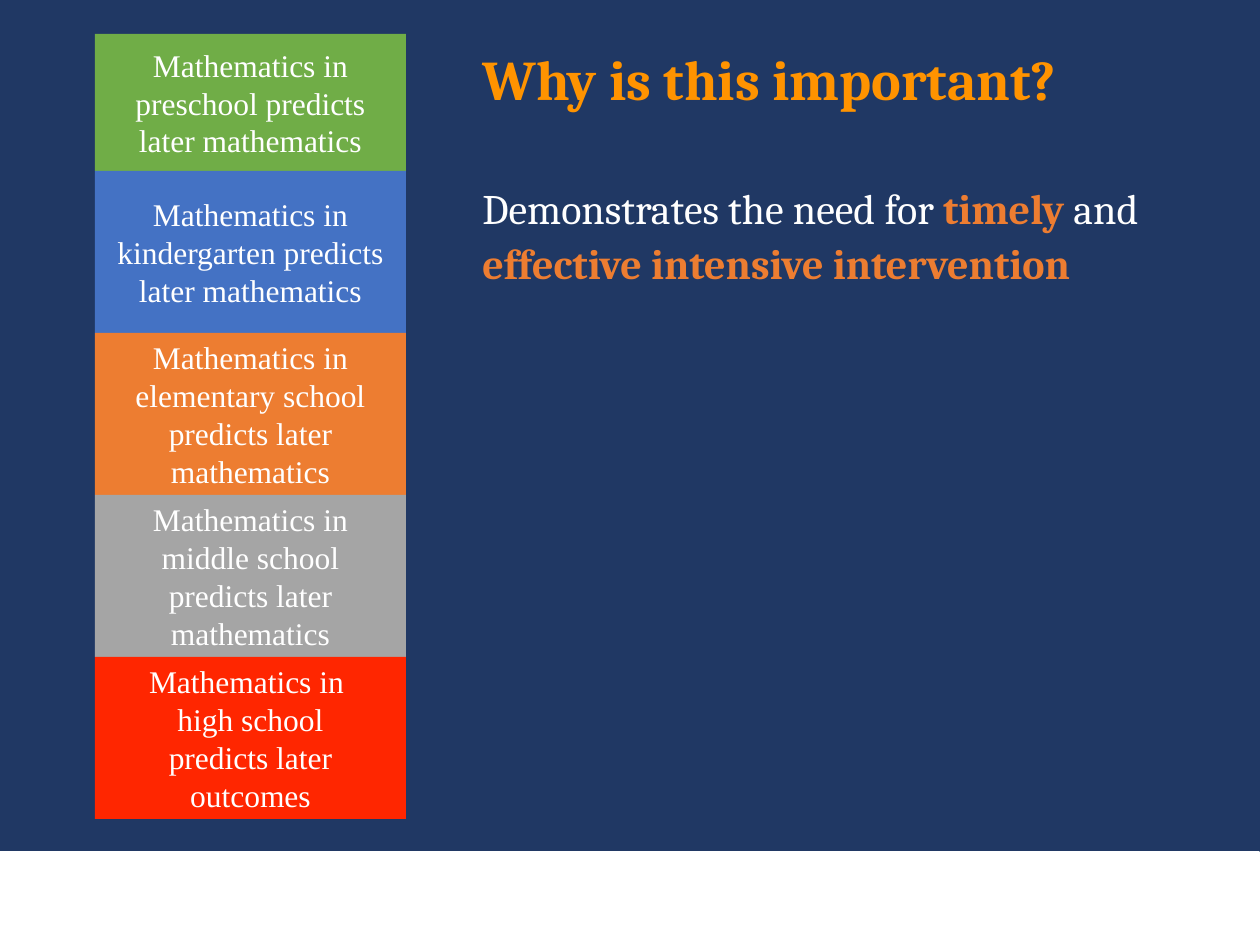
import pptx
import pptx.dml.color
import pptx.enum.shapes
import pptx.enum.text
import pptx.util

RGBColor = pptx.dml.color.RGBColor
ANCHOR = pptx.enum.text.MSO_ANCHOR
ALIGN = pptx.enum.text.PP_ALIGN

NAVY = RGBColor(0x20, 0x38, 0x64)
WHITE = RGBColor(0xFF, 0xFF, 0xFF)
GREEN = RGBColor(0x70, 0xAD, 0x47)
BLUE = RGBColor(0x44, 0x72, 0xC4)
ORANGE = RGBColor(0xED, 0x7D, 0x31)
GRAY = RGBColor(0xA5, 0xA5, 0xA5)
RED = RGBColor(0xFF, 0x26, 0x00)
AMBER = RGBColor(0xFF, 0x93, 0x00)

EMU_PER_PX = 914400 / 126
STACK_LEFT, STACK_TOP, STACK_WIDTH = 95, 34, 311
STAGES = [
    (GREEN, 137, ["Mathematics in preschool predicts later mathematics"]),
    (BLUE, 162, ["Mathematics in kindergarten predicts later mathematics"]),
    (ORANGE, 162, ["Mathematics in elementary school", "predicts later mathematics"]),
    (GRAY, 162, ["Mathematics in middle school", "predicts later mathematics"]),
    (RED, 162, ["Mathematics in ", "high school", "predicts later outcomes"]),
]


def px(length):
    return pptx.util.Emu(round(length * EMU_PER_PX))


def write_text(box, paragraphs, font, size, align=ALIGN.LEFT, anchor=ANCHOR.TOP, spacing=None):
    frame = box.text_frame
    frame.word_wrap = True
    frame.vertical_anchor = anchor
    for index, spans in enumerate(paragraphs):
        para = frame.paragraphs[0] if index == 0 else frame.add_paragraph()
        para.alignment = align
        para.line_spacing = spacing
        for text, color, bold in spans:
            span = para.add_run()
            span.text = text
            span.font.name = font
            span.font.size = pptx.util.Pt(size)
            span.font.bold = bold
            span.font.color.rgb = color


def add_block(page, left, top, width, height, fill, line=None):
    block = page.shapes.add_shape(
        pptx.enum.shapes.MSO_SHAPE.RECTANGLE, px(left), px(top), px(width), px(height)
    )
    block.shadow.inherit = False
    block.fill.solid()
    block.fill.fore_color.rgb = fill
    if line is None:
        block.line.fill.background()
    else:
        block.line.color.rgb = line
        block.line.width = pptx.util.Pt(1)
    return block


def add_text_box(page, left, top, width, height):
    return page.shapes.add_textbox(px(left), px(top), px(width), px(height))


def add_stages(page):
    top = STACK_TOP
    for fill, height, lines in STAGES:
        block = add_block(page, STACK_LEFT, top, STACK_WIDTH, height, fill)
        paragraphs = [[(line, WHITE, False)] for line in lines]
        write_text(block, paragraphs, "Times New Roman", 18,
                   align=ALIGN.CENTER, anchor=ANCHOR.MIDDLE)
        top += height


def main():
    deck = pptx.Presentation()
    deck.slide_width, deck.slide_height = px(1260), px(945)
    page = deck.slides.add_slide(deck.slide_layouts[6])
    page.background.fill.solid()
    page.background.fill.fore_color.rgb = NAVY

    add_block(page, 0, 852, 1259, 93, WHITE, line=WHITE)
    add_stages(page)

    title = add_text_box(page, 470, 32, 759, 101)
    title.fill.solid()
    title.fill.fore_color.rgb = NAVY
    write_text(title, [[("Why is this important?", AMBER, True)]], "Cambria", 32, spacing=1.1)

    body = add_text_box(page, 470, 171, 759, 667)
    message = [
        ("Demonstrates the need for ", WHITE, False),
        ("timely ", ORANGE, True),
        ("and ", WHITE, False),
        ("effective intensive intervention", ORANGE, True),
    ]
    write_text(body, [message], "Cambria", 24, spacing=1.1)

    deck.save("out.pptx")


if __name__ == "__main__":
    main()
